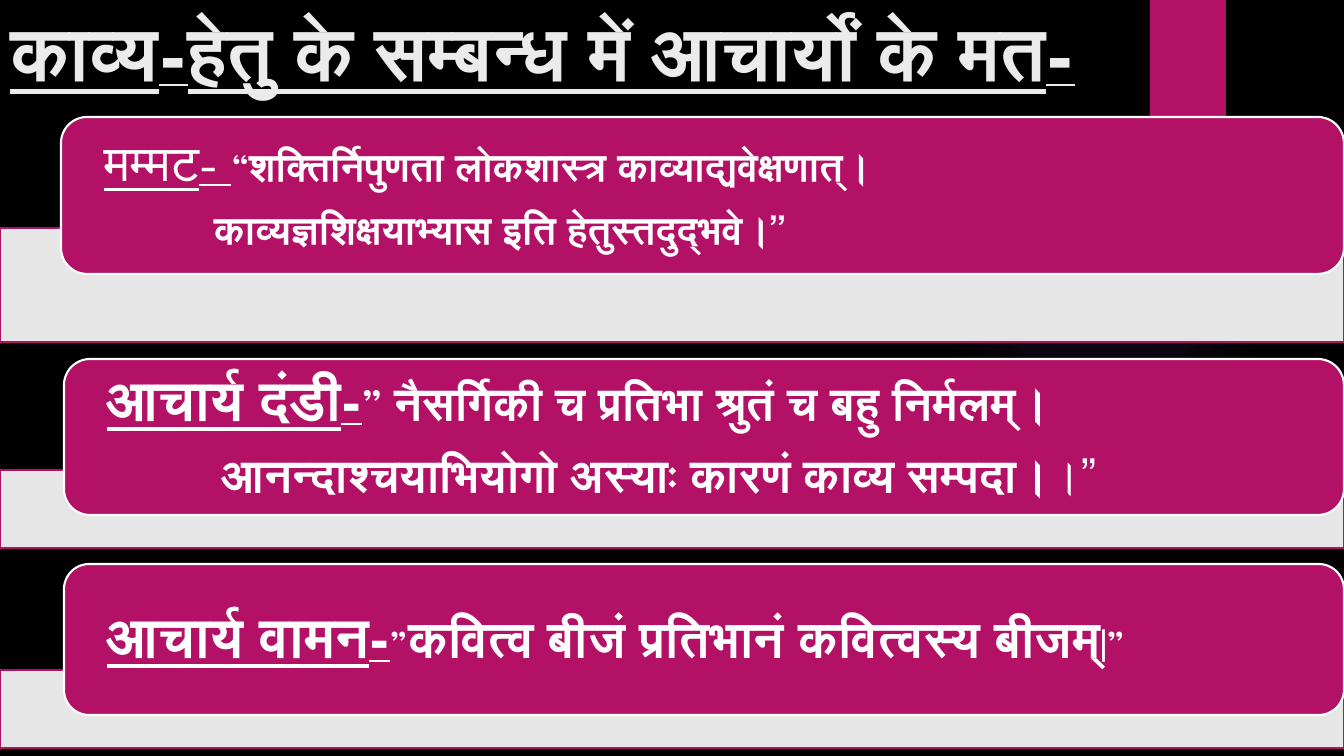
import pptx
import pptx.util
import pptx.dml.color
import pptx.enum.shapes
import pptx.enum.text
import lxml.etree
import pptx.oxml
import pptx.oxml.ns

PX = 914400 / 100.8
FONT = "League Spartan"
MAGENTA, WHITE = "B31166", "FFFFFF"
qn = pptx.oxml.ns.qn
color = pptx.dml.color.RGBColor.from_string
shapes = pptx.enum.shapes.MSO_SHAPE

deck = pptx.Presentation()
deck.slide_width, deck.slide_height = round(1344 * PX), round(756 * PX)
page = deck.slides.add_slide(deck.slide_layouts[6])
page.background.fill.solid()
page.background.fill.fore_color.rgb = color("000000")


def add_block(kind, place, fill, line=None):
    block = page.shapes.add_shape(kind, *[round(n * PX) for n in place])
    block.shadow.inherit = False
    block.fill.solid()
    block.fill.fore_color.rgb = color(fill)
    if line:
        block.line.color.rgb = color(line)
        block.line.width = pptx.util.Pt(1.5)
    else:
        block.line.fill.background()
    return block


def add_text(place, inset, lines, ink, space_after):
    box = page.shapes.add_textbox(*[round(n * PX) for n in place])
    frame = box.text_frame
    frame.word_wrap = True
    frame.vertical_anchor = pptx.enum.text.MSO_ANCHOR.MIDDLE
    frame.margin_left = frame.margin_right = round(inset * PX)
    frame.margin_top = frame.margin_bottom = 0
    for number, (indent, spans) in enumerate(lines):
        para = frame.add_paragraph() if number else frame.paragraphs[0]
        para.line_spacing = 0.9
        properties = para._p.get_or_add_pPr()
        properties.set("marL", str(round(indent * PX)))
        properties.set("indent", "0")
        if space_after:
            after = lxml.etree.SubElement(properties, qn("a:spcAft"))
            lxml.etree.SubElement(after, qn("a:spcPct"), val=str(space_after * 1000))
        for text, size, bold, underline in spans:
            span = para.add_run()
            span.text = text
            span.font.size = pptx.util.Pt(size)
            span.font.bold = bold
            span.font.underline = underline
            span.font.color.rgb = color(ink)
            span.font.name = FONT


# Faint violet glow behind everything
glow = add_block(shapes.OVAL, (949, 184, 310, 310), "9B6BF2")
gradient = pptx.oxml.parse_xml(
    '<a:gradFill xmlns:a="http://schemas.openxmlformats.org/drawingml/2006/main"><a:gsLst>'
    + "".join(
        f'<a:gs pos="{stop * 1000}"><a:srgbClr val="9B6BF2"><a:alpha val="{alpha * 1000}"/></a:srgbClr></a:gs>'
        for stop, alpha in ((0, 7), (36, 6), (69, 0))
    )
    + '</a:gsLst><a:path path="circle"><a:fillToRect l="50000" t="50000" r="50000" b="50000"/></a:path></a:gradFill>'
)
solid = glow._element.spPr.find(qn("a:solidFill"))
glow._element.spPr.replace(solid, gradient)

# Ribbon and title
add_block(shapes.RECTANGLE, (1150, 0, 76, 126), MAGENTA)
title = [(0, [("काव्य-हेतु के सम्बन्ध में आचार्यों के मत-", 54, True, True)])]
add_text((0, 0, 1344, 111), 10, title, "EBEBEB", 0)

# Each quotation: band top and height, card left, top and height, text lines
quotations = [
    ((228, 114), (61, 117, 157), [
        (0, [("मम्मट- ", 36, False, True), ("“", 28, False, False),
             ("शक्तिर्निपुणता लोकशास्त्र काव्याद्यवेक्षणात्।", 28, True, False)]),
        (110, [("काव्यज्ञशिक्षयाभ्यास इति हेतुस्तदुद्भवे।”", 28, True, False)]),
    ]),
    ((470, 78), (64, 359, 156), [
        (0, [("आचार्य दंडी-", 40, True, True), ("” ", 33, False, False),
             ("नैसर्गिकी च प्रतिभा श्रुतं च बहु निर्मलम्।", 33, True, False)]),
        (115, [("आनन्दाश्चयाभियोगो अस्याः कारणं काव्य सम्पदा।", 33, True, False),
               ("।”", 33, False, False)]),
    ]),
    ((670, 78), (64, 564, 151), [
        (0, [("आचार्य वामन-", 40, True, True), ("”", 28, False, False),
             ("कवित्व बीजं प्रतिभानं कवित्वस्य बीजम्", 36, True, False),
             ("|”", 28, False, False)]),
    ]),
]
for (band_top, band_height), (left, top, height), lines in quotations:
    band = add_block(shapes.RECTANGLE, (0, band_top, 1344, band_height), WHITE, MAGENTA)
    tint = band._element.spPr.find(qn("a:solidFill"))[0]
    lxml.etree.SubElement(tint, qn("a:alpha"), val="90000")
    width = 1344 - left
    add_block(shapes.ROUNDED_RECTANGLE, (left, top, width, height), MAGENTA, WHITE)
    add_text((left + 8, top + 8, width - 16, height - 16), 35, lines, WHITE, 35)

deck.save("out.pptx")
